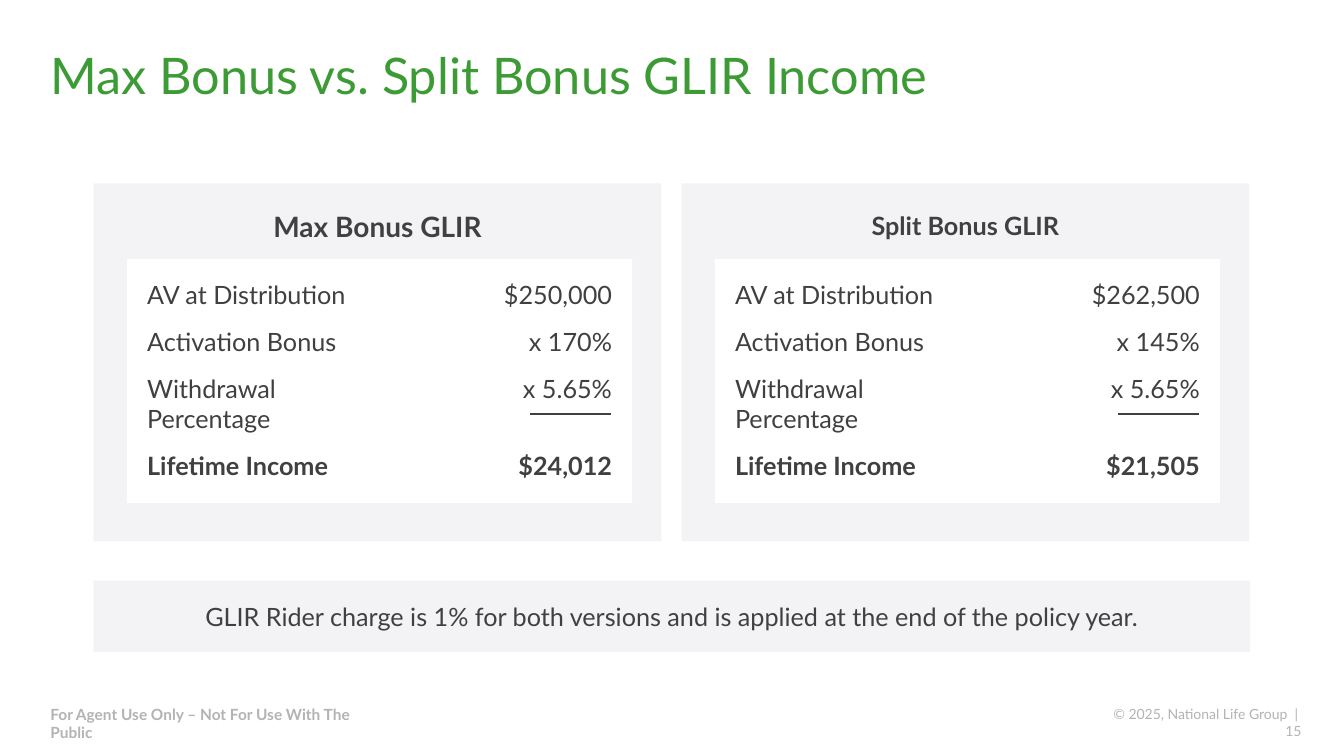
import pptx
import pptx.util
import pptx.dml.color
import pptx.enum.shapes
import pptx.enum.text
import pptx.oxml
from pptx.util import Inches

GREEN = pptx.dml.color.RGBColor(0x3C, 0x9B, 0x34)
DARK = pptx.dml.color.RGBColor(0x41, 0x40, 0x41)
MUTED = pptx.dml.color.RGBColor(0xB1, 0xB3, 0xB5)
PALE = pptx.dml.color.RGBColor(0xF3, 0xF3, 0xF5)
WHITE = pptx.dml.color.RGBColor(0xFF, 0xFF, 0xFF)
ALIGN = pptx.enum.text.PP_ALIGN
ANCHOR = pptx.enum.text.MSO_ANCHOR


def write(shape, lines, size, color, align, anchor, margins=(0, 0, 0, 0), bold=False):
    """Fill a shape with formatted paragraphs; margins are left, top, right, bottom."""
    frame = shape.text_frame
    frame.text = "\n".join(lines)
    frame.word_wrap = True
    frame.auto_size = pptx.enum.text.MSO_AUTO_SIZE.NONE
    frame.vertical_anchor = anchor
    frame.margin_left, frame.margin_top, frame.margin_right, frame.margin_bottom = map(Inches, margins)
    for paragraph in frame.paragraphs:
        paragraph.alignment = align
        for run in paragraph.runs:
            run.font.name = "Lato"
            run.font.size = pptx.util.Pt(size)
            run.font.bold = bold
            run.font.color.rgb = color
    return frame.paragraphs


def add_panel(left, top, width, height, fill):
    panel = slide.shapes.add_shape(
        pptx.enum.shapes.MSO_SHAPE.RECTANGLE,
        Inches(left), Inches(top), Inches(width), Inches(height))
    panel.shadow.inherit = False
    panel.fill.solid()
    panel.fill.fore_color.rgb = fill
    panel.line.fill.background()
    return panel


presentation = pptx.Presentation()
presentation.slide_width = Inches(13.33)
presentation.slide_height = Inches(7.5)
slide = presentation.slides.add_slide(presentation.slide_layouts[5])

# Title
title = slide.shapes.title
title.left, title.top, title.width, title.height = map(Inches, (0.5, 0.5, 12.33, 0.55))
paragraphs = write(title, ["Max Bonus vs. Split Bonus GLIR Income"], 36, GREEN, ALIGN.LEFT, ANCHOR.MIDDLE)
paragraphs[0].line_spacing = 0.9

# Footer texts
footers = [
    (0.5, 3.39, 0.19, "For Agent Use Only – Not For Use With The Public", 11, ALIGN.LEFT, True),
    (10.95, 1.96, 0.17, "© 2025, National Life Group  |  15", 10, ALIGN.RIGHT, False),
]
for left, width, height, text, size, align, bold in footers:
    footer = slide.shapes.add_textbox(Inches(left), Inches(7.08), Inches(width), Inches(height))
    write(footer, [text], size, MUTED, align, ANCHOR.MIDDLE, bold=bold)

# Comparison cards
labels = ["AV at Distribution", "Activation Bonus", "Withdrawal Percentage", "Lifetime Income"]
cards = [
    (0.93, "Max Bonus GLIR", 20, ["$250,000", "x 170%", "x 5.65%", "$24,012"]),
    (6.76, "Split Bonus GLIR", 18, ["$262,500", "x 145%", "x 5.65%", "$21,505"]),
]
for left, heading, heading_size, values in cards:
    card = add_panel(left, 1.82, 5.63, 3.55, PALE)
    paragraphs = write(card, [heading], heading_size, DARK, ALIGN.CENTER, ANCHOR.TOP,
                       (0.2, 0.3, 0.2, 0.25), bold=True)
    paragraphs[0].line_spacing = 0.9

    # Label and value columns; the third value leaves room for the sum rule
    columns = [
        (0.33, 2.62, labels, ALIGN.LEFT, 0, (12, 12, 12, 12)),
        (2.92, 2.42, values, ALIGN.RIGHT, 0.2, (12, 12, 33.6, 6)),
    ]
    for offset, width, lines, align, right_margin, gaps in columns:
        column = add_panel(left + offset, 2.57, width, 2.42, WHITE)
        paragraphs = write(column, lines, 18, DARK, align, ANCHOR.TOP, (0.2, 0.2, right_margin, 0.2))
        for paragraph, gap in zip(paragraphs, gaps):
            paragraph.space_after = pptx.util.Pt(gap)
        paragraphs[-1].runs[0].font.bold = True

    # Sum rule
    rule = slide.shapes.add_connector(
        pptx.enum.shapes.MSO_CONNECTOR.STRAIGHT,
        Inches(left + 4.33), Inches(4.11), Inches(left + 5.13), Inches(4.11))
    rule.line.color.rgb = DARK
    rule.line.width = pptx.util.Pt(1.25)
    rule._element.spPr.append(pptx.oxml.parse_xml(
        '<a:effectLst xmlns:a="http://schemas.openxmlformats.org/drawingml/2006/main"/>'))

# Rider charge note
note = add_panel(0.93, 5.76, 11.47, 0.71, PALE)
write(note, ["GLIR Rider charge is 1% for both versions and is applied at the end of the policy year."],
      18, DARK, ALIGN.CENTER, ANCHOR.MIDDLE, (0.2, 0.2, 0.2, 0.2))

presentation.save("out.pptx")
